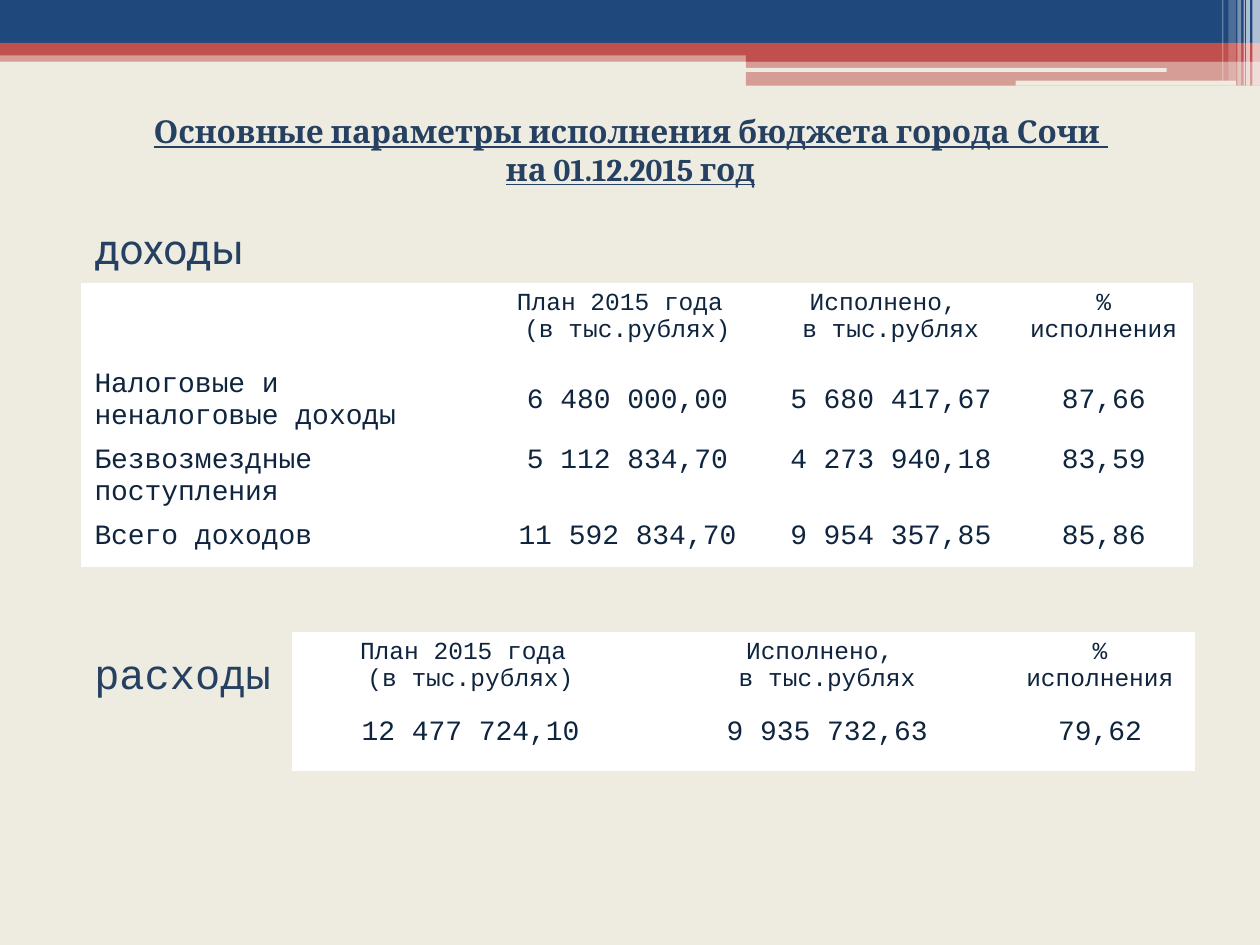
from lxml import etree
from pptx import Presentation
from pptx import util as u
from pptx.dml import color
from pptx.enum import shapes, text
from pptx.oxml import ns

NAVY, RED, CREAM, WHITE = "1F497D", "C0504D", "EEECE1", "FFFFFF"
TITLE_INK, TABLE_INK = "254061", "0F243E"
MONO = "Courier New"
LEFT, CENTER = text.PP_ALIGN.LEFT, text.PP_ALIGN.CENTER

BANDS = [
    (0, 0.4, 10, 0.09, RED, 50),
    (0, 0, 10, 0.34, NAVY, 100),
    (0, 0.34, 10, 0.1, RED, 100),
    (5.92, 0.39, 4.08, 0.1, RED, 100),
    (5.92, 0.48, 4.08, 0.2, RED, 50),
]
SLITS = [(5.91, 0.54, 3.35, 0.03), (8.06, 0.64, 1.75, 0.04)]
STRIPES = [
    (9.94, 0.06, 0.68, 65),
    (9.89, 0.03, 0.68, 65),
    (9.87, 0.01, 0.68, 60),
    (9.82, 0.03, 0.68, 40),
    (9.75, 0.06, 0.64, 20),
    (9.7, 0.01, 0.64, 30),
]
HEADINGS = ["План 2015 года \n(в тыс.рублях)", "Исполнено, \nв тыс.рублях", "% исполнения"]
INCOME = [
    [""] + HEADINGS,
    ["Налоговые и неналоговые доходы", "6 480 000,00", "5 680 417,67", "87,66"],
    ["Безвозмездные поступления", "5 112 834,70", "4 273 940,18", "83,59"],
    ["Всего доходов", "11 592 834,70", "9 954 357,85", "85,86"],
]
EXPENSES = [HEADINGS, ["12 477 724,10", "9 935 732,63", "79,62"]]


def paint(fill, value):
    fill.solid()
    fill.fore_color.rgb = color.RGBColor.from_string(value)


def add_block(page, left, top, width, height, value, opacity=100, rounded=False):
    kind = shapes.MSO_SHAPE.ROUNDED_RECTANGLE if rounded else shapes.MSO_SHAPE.RECTANGLE
    block = page.shapes.add_shape(kind, *map(u.Inches, (left, top, width, height)))
    block.shadow.inherit = False
    block.line.fill.background()
    paint(block.fill, value)
    if opacity < 100:
        tint = block.fill._xPr.find(".//" + ns.qn("a:srgbClr"))
        etree.SubElement(tint, ns.qn("a:alpha"), val=str(opacity * 1000))


def write(frame, content, size, font, value, align=LEFT, strong=False):
    frame.text = content
    for para in frame.paragraphs:
        para.alignment = align
        for span in para.runs:
            span.font.size = u.Pt(size)
            span.font.name = font
            span.font.bold = strong
            span.font.underline = strong
            paint(span.font.fill, value)


def add_label(page, left, top, width, height, content, size, font, **style):
    box = page.shapes.add_textbox(*map(u.Inches, (left, top, width, height)))
    box.text_frame.word_wrap = True
    box.text_frame.auto_size = text.MSO_AUTO_SIZE.SHAPE_TO_FIT_TEXT
    write(box.text_frame, content, size, font, TITLE_INK, **style)


def add_borders(cell, bottom_width):
    properties = cell._tc.get_or_add_tcPr()
    for side, width in (("L", 1), ("R", 1), ("T", 1), ("B", bottom_width)):
        line = etree.SubElement(properties, ns.qn(f"a:ln{side}"), w=str(u.Pt(width)))
        fill = etree.SubElement(line, ns.qn("a:solidFill"))
        etree.SubElement(fill, ns.qn("a:srgbClr"), val=WHITE)


def add_budget_table(page, left, top, widths, heights, rows):
    frame = page.shapes.add_table(
        len(rows), len(widths), *map(u.Inches, (left, top, sum(widths), sum(heights))))
    table = frame.table
    table.first_row = table.horz_banding = False
    for column, width in zip(table.columns, widths):
        column.width = u.Inches(width)
    for row, height in zip(table.rows, heights):
        row.height = u.Inches(height)
    for i, values in enumerate(rows):
        for j, value in enumerate(values):
            cell = table.cell(i, j)
            named_row = len(values) == 4 and j == 0
            write(cell.text_frame, value, 16 if i else 14, MONO, TABLE_INK,
                  LEFT if named_row else CENTER)
            add_borders(cell, 1 if i else 3)
            paint(cell.fill, WHITE)
    return table


def add_header(page):
    for band in BANDS:
        add_block(page, *band)
    for slit in SLITS:
        add_block(page, *slit, CREAM, rounded=True)
    for left, width, height, opacity in STRIPES:
        add_block(page, left, 0, width, height, WHITE, opacity)


def main():
    deck = Presentation()
    deck.slide_width, deck.slide_height = u.Inches(10), u.Inches(7.5)
    page = deck.slides.add_slide(deck.slide_layouts[6])
    paint(page.background.fill, CREAM)
    add_header(page)
    income = add_budget_table(
        page, 0.65, 2.25, [3.23, 2.2, 1.98, 1.4], [0.63, 0.41, 0.41, 0.41], INCOME)
    for j in range(1, 4):
        income.cell(1, j).vertical_anchor = text.MSO_ANCHOR.MIDDLE
    add_label(page, 0.65, 1.72, 2.2, 0.5, "доходы", 24, "Roboto")
    add_label(page, 0.65, 5.09, 2.2, 0.5, "расходы", 24, MONO)
    add_budget_table(page, 2.32, 5.02, [2.83, 2.83, 1.5], [0.62, 0.47], EXPENSES)
    add_label(page, 0.24, 0.84, 9.53, 0.71,
              "Основные параметры исполнения бюджета города Сочи \nна 01.12.2015 год",
              18, "Cambria", align=CENTER, strong=True)
    deck.save("out.pptx")


if __name__ == "__main__":
    main()
